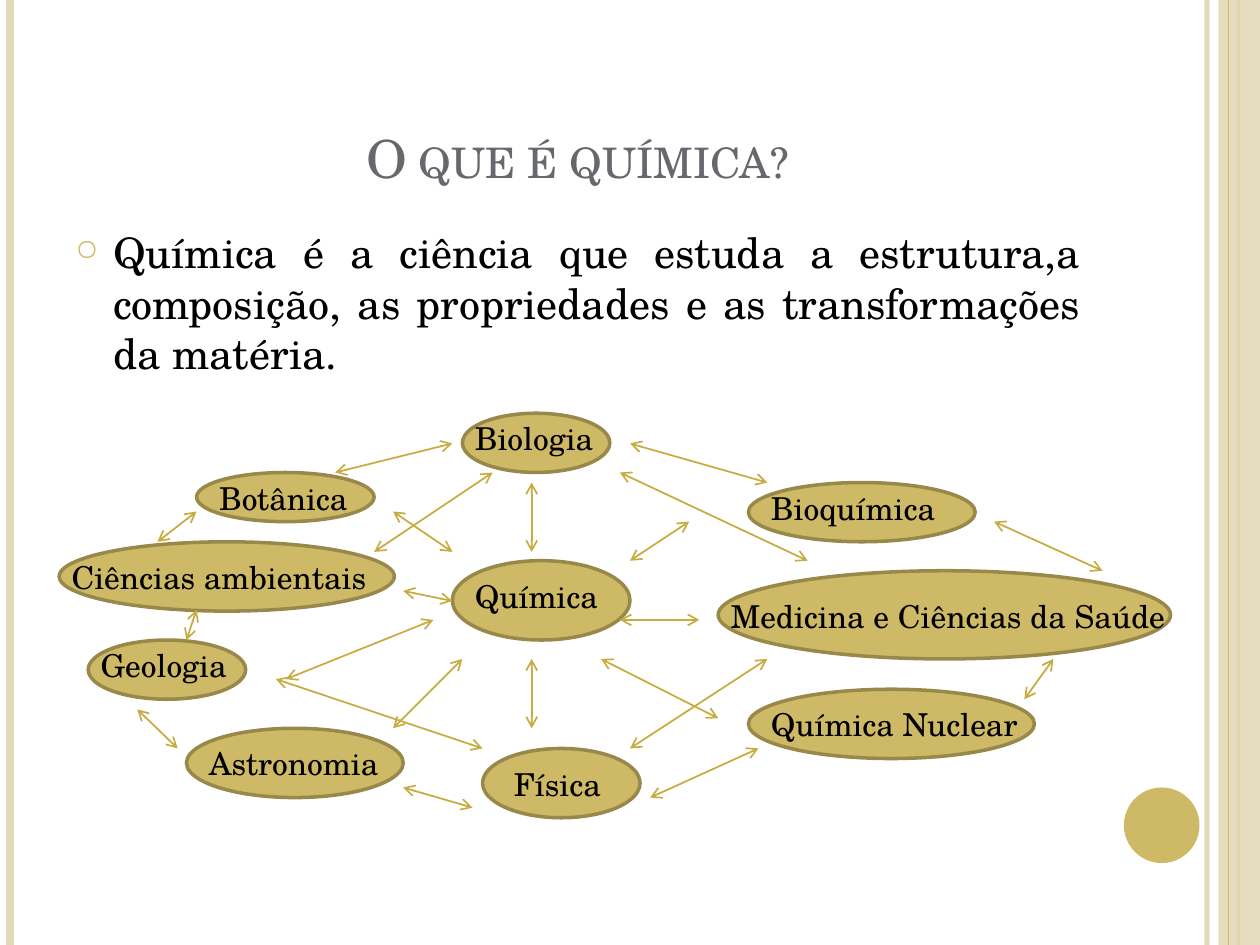
from lxml import etree
from pptx import Presentation
from pptx.dml.color import RGBColor
from pptx.enum.shapes import MSO_CONNECTOR, MSO_SHAPE
from pptx.enum.text import MSO_ANCHOR, PP_ALIGN
from pptx.oxml.ns import qn
from pptx.util import Emu, Pt

PX = 9144
FONT = "TeX Gyre Schola"
STRAIGHT = MSO_CONNECTOR.STRAIGHT
OVAL, RECTANGLE = MSO_SHAPE.OVAL, MSO_SHAPE.RECTANGLE
TOP, BOTTOM = MSO_ANCHOR.TOP, MSO_ANCHOR.BOTTOM
LEFT, CENTER, JUSTIFY = PP_ALIGN.LEFT, PP_ALIGN.CENTER, PP_ALIGN.JUSTIFY

COLORS = {
    "sand": "E3D9B8",
    "gold": "CEB966",
    "outline": "98894B",
    "arrow": "C7AC41",
    "title": "69676D",
    "text": "000000",
}

STRIPES = [
    (958, "sand", 3, 93),
    (8, "sand", 4.5, 100),
    (983, "gold", 1.5, 100),
    (975, "gold", 0.75, 100),
]

SCIENCES = [
    ("Astronomia", (148, 578, 172, 55), (156, 586, 195, 40)),
    ("Geologia", (70, 508, 125, 47), (70, 508, 195, 40)),
    ("Ciências ambientais", (47, 430, 266, 55), (47, 438, 273, 40)),
    ("Botânica", (156, 375, 141, 39), (164, 375, 195, 40)),
    ("Biologia", (367, 328, 117, 47), (367, 328, 195, 71)),
    ("Física", (383, 594, 125, 55), (398, 602, 195, 40)),
    ("Química Nuclear", (594, 547, 227, 55), (602, 555, 250, 40)),
    ("Medicina e Ciências da Saúde", (570, 453, 359, 70), (570, 469, 383, 40)),
    ("Bioquímica", (594, 383, 180, 47), (602, 383, 195, 40)),
    ("Química", (359, 445, 141, 63), (367, 453, 195, 40)),
]

ARROWS = [
    (422, 383, 422, 438), (477, 523, 570, 570), (555, 492, 492, 492),
    (547, 414, 500, 445), (422, 523, 422, 578), (344, 492, 227, 539),
    (367, 523, 312, 578), (312, 406, 359, 438), (359, 477, 320, 469),
    (836, 523, 813, 555), (789, 414, 875, 453), (500, 352, 609, 383),
    (156, 406, 125, 430), (109, 563, 141, 594), (320, 625, 375, 641),
    (602, 594, 516, 633), (156, 484, 148, 508), (391, 375, 297, 438),
    (359, 352, 266, 375), (641, 445, 492, 375), (609, 523, 500, 594),
    (383, 594, 219, 539),
]


def px(*lengths):
    """Convert pixel lengths to EMU."""
    return [Emu(length * PX) for length in lengths]


def color(name):
    """Return a named colour."""
    return RGBColor.from_string(COLORS[name])


def set_opacity(element, percent):
    """Set the opacity of the first solid colour inside an element."""
    solid = next(element.iter(qn("a:srgbClr")))
    etree.SubElement(solid, qn("a:alpha"), val=str(percent * 1000))


def add_line(slide, ends, color_name, width, opacity=100, arrows=False):
    """Add a straight line, optionally with open arrowheads at both ends."""
    connector = slide.shapes.add_connector(STRAIGHT, *px(*ends))
    connector.line.color.rgb = color(color_name)
    connector.line.width = Pt(width)
    properties = connector.element.spPr
    if opacity < 100:
        set_opacity(properties, opacity)
    if arrows:
        outline = properties.find(qn("a:ln"))
        for tag in ("a:headEnd", "a:tailEnd"):
            etree.SubElement(outline, qn(tag), type="arrow")
    etree.SubElement(properties, qn("a:effectLst"))


def add_filled(slide, kind, box, fill, outline=None, opacity=100):
    """Add a filled shape with an optional outline."""
    shape = slide.shapes.add_shape(kind, *px(*box))
    shape.shadow.inherit = False
    shape.fill.solid()
    shape.fill.fore_color.rgb = color(fill)
    if opacity < 100:
        set_opacity(shape.element.spPr, opacity)
    if outline:
        shape.line.color.rgb = color(outline)
        shape.line.width = Pt(2)
    else:
        shape.line.fill.background()


def add_text(slide, text, box, size=18, color_name="text", align=LEFT,
             anchor=TOP, small_caps=False):
    """Add a wrapped text box and return its paragraph."""
    frame = slide.shapes.add_textbox(*px(*box)).text_frame
    frame.word_wrap = True
    frame.vertical_anchor = anchor
    paragraph = frame.paragraphs[0]
    paragraph.alignment = align
    run = paragraph.add_run()
    run.text = text
    run.font.name = FONT
    run.font.size = Pt(size)
    run.font.color.rgb = color(color_name)
    if small_caps:
        run._r.get_or_add_rPr().set("cap", "small")
    return paragraph


def add_bullet(paragraph, character, color_name, percent, indent):
    """Give a paragraph a coloured bullet and a hanging indent."""
    properties = paragraph._p.get_or_add_pPr()
    properties.set("marL", str(indent * PX))
    properties.set("indent", str(-indent * PX))
    bullet_color = etree.SubElement(properties, qn("a:buClr"))
    etree.SubElement(bullet_color, qn("a:srgbClr"), val=COLORS[color_name])
    etree.SubElement(properties, qn("a:buSzPct"), val=str(percent * 1000))
    etree.SubElement(properties, qn("a:buChar"), char=character)


def add_decoration(slide):
    """Add the vertical stripes, side band and corner circle."""
    for index, (x, color_name, width, opacity) in enumerate(STRIPES):
        if index == 3:
            add_filled(slide, RECTANGLE, (967, 0, 33, 750), "sand", opacity=87)
        add_line(slide, (x, 0, x, 750), color_name, width, opacity)
    add_filled(slide, OVAL, (892, 625, 60, 60), "gold")


def add_diagram(slide):
    """Add the sciences, their labels and the arrows between them."""
    for _, oval_box, _ in SCIENCES:
        add_filled(slide, OVAL, oval_box, "gold", "outline")
    for name, _, label_box in SCIENCES:
        add_text(slide, name, label_box)
    for ends in ARROWS:
        add_line(slide, ends, "arrow", 1, arrows=True)


def main():
    """Build and save the slide."""
    presentation = Presentation()
    presentation.slide_width, presentation.slide_height = px(1000, 750)
    slide = presentation.slides.add_slide(presentation.slide_layouts[6])
    add_decoration(slide)
    add_text(slide, "O que é química?", (50, 30, 817, 125), size=30,
             color_name="title", align=CENTER, anchor=BOTTOM, small_caps=True)
    definition = add_text(
        slide,
        "Química é a ciência que estuda a estrutura,a composição, "
        "as propriedades e as transformações da matéria.",
        (50, 175, 817, 533), size=24, align=JUSTIFY)
    definition.space_before = Pt(6)
    add_bullet(definition, "○", "gold", 70, 30)
    add_diagram(slide)
    presentation.save("out.pptx")


if __name__ == "__main__":
    main()
